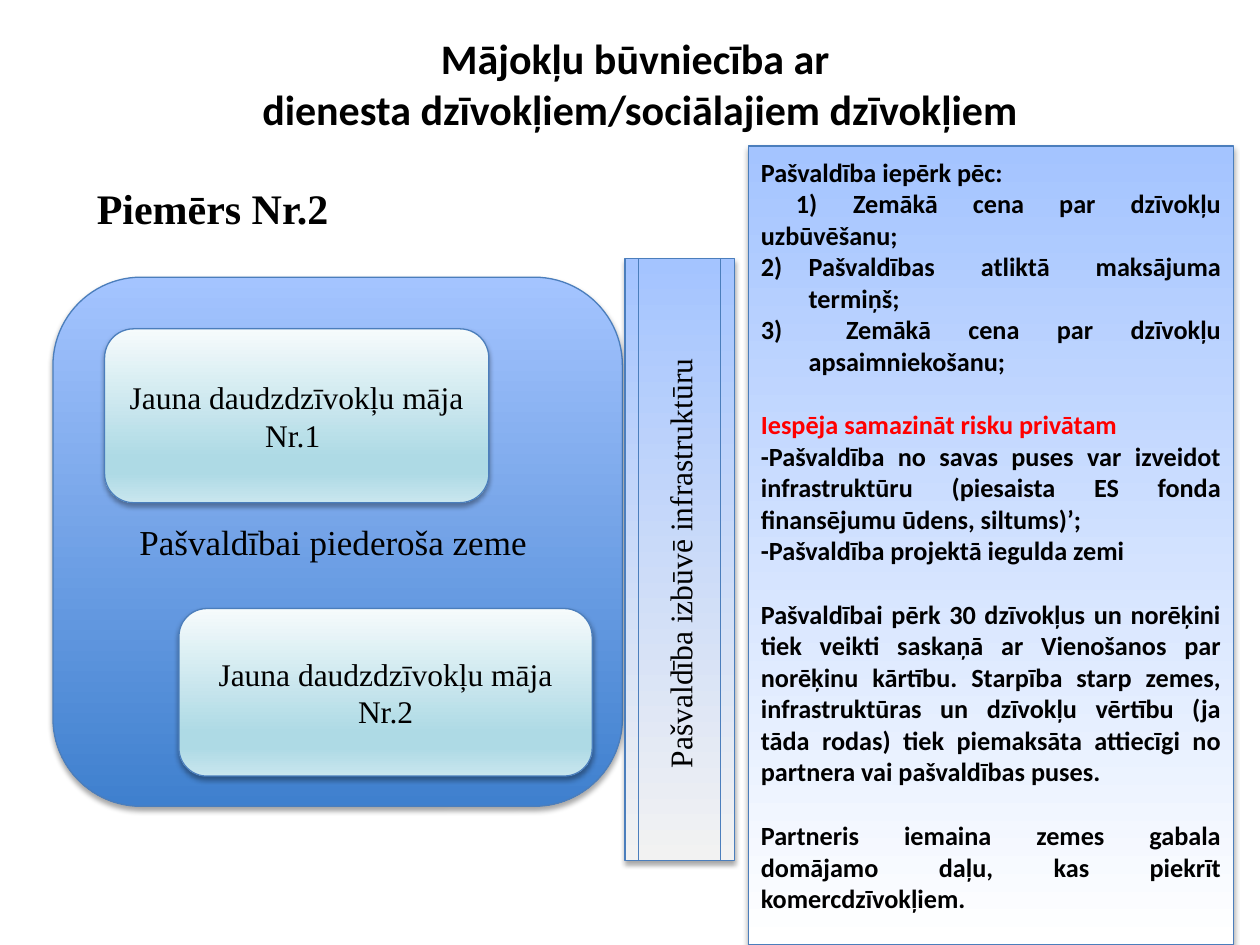
import dataclasses

import pptx
import pptx.dml.color
import pptx.enum.shapes
import pptx.enum.text
import pptx.oxml.ns
import pptx.oxml.xmlchemy
import pptx.util
from lxml import etree

SHAPE = pptx.enum.shapes.MSO_SHAPE
ALIGN = pptx.enum.text.PP_ALIGN
ANCHOR = pptx.enum.text.MSO_ANCHOR
qn = pptx.oxml.ns.qn

COLUMNS, ROWS = 100, 75


@dataclasses.dataclass(frozen=True)
class Theme:
    sans: str = "Calibri"
    serif: str = "Times New Roman"
    heading: int = 24
    land: int = 20
    label: int = 18
    body: int = 15
    ink: str = "000000"
    accent: str = "FF0000"
    outline: str = "4B7EBC"
    # Gradient stops run from top to bottom.
    land_fill: tuple = ((0, "A4C4FF"), (100, "3F80CE"))
    house_fill: tuple = ((0, "F6FBFC"), (74, "AEDAE5"), (83, "AEDAE5"), (100, "C9E6EE"))
    utility_fill: tuple = ((0, "A4C4FF"), (100, "F2F2F2"))
    terms_fill: tuple = ((0, "A4C4FF"), (100, "FFFFFF"))


THEME = Theme()


def place(deck, left, top, width, height):
    """Turn grid columns and rows into slide lengths."""
    column, row = deck.slide_width / COLUMNS, deck.slide_height / ROWS
    return [round(n) for n in (left * column, top * row, width * column, height * row)]


def write(para, text, size=THEME.body, font=THEME.serif, color=THEME.ink,
          bold=False, align=ALIGN.CENTER, gap=0, number_from=None):
    """Fill a paragraph; number_from makes it part of a list like 2), 3)."""
    if number_from:
        indent = pptx.util.Inches(0.38)
        props = para._p.get_or_add_pPr()
        props.set("marL", str(indent))
        props.set("indent", str(-indent))
        etree.SubElement(props, qn("a:buAutoNum"), type="arabicParenR",
                         startAt=str(number_from))
    para.alignment = align
    if gap:
        para.space_before = pptx.util.Pt(gap)
    for index, line in enumerate(text.split("\n")):
        if index:
            para.add_line_break()
        span = para.add_run()
        span.text = line
        span.font.size = pptx.util.Pt(size)
        span.font.name = font
        span.font.bold = bold
        span.font.color.rgb = pptx.dml.color.RGBColor.from_string(color)


def add_heading(deck, page, area, text, **format):
    box = page.shapes.add_textbox(*place(deck, *area))
    box.text_frame.word_wrap = True
    write(box.text_frame.paragraphs[0], text, size=THEME.heading, bold=True, **format)


def fill_gradient(shape, stops):
    shape.fill.gradient()
    shape.fill.gradient_angle = 270
    stop_list = shape._element.spPr.find(qn("a:gradFill")).find(qn("a:gsLst"))
    for old_stop in list(stop_list):
        stop_list.remove(old_stop)
    for position, color in stops:
        stop = etree.SubElement(stop_list, qn("a:gs"), pos=str(position * 1000))
        etree.SubElement(stop, qn("a:srgbClr"), val=color)


def cast_shadow(shape):
    shape.shadow.inherit = False
    effects = shape._element.spPr.find(qn("a:effectLst"))
    shadow = etree.SubElement(
        effects, qn("a:outerShdw"), blurRad=str(pptx.util.Pt(3.1)),
        dist=str(pptx.util.Pt(1.8)), dir="5400000", rotWithShape="0")
    color = etree.SubElement(shadow, qn("a:srgbClr"), val=THEME.ink)
    etree.SubElement(color, qn("a:alpha"), val="35000")


def add_block(deck, page, kind, area, stops):
    block = page.shapes.add_shape(kind, *place(deck, *area))
    fill_gradient(block, stops)
    block.line.color.rgb = pptx.dml.color.RGBColor.from_string(THEME.outline)
    block.line.width = pptx.util.Pt(0.75)
    cast_shadow(block)
    block.text_frame.word_wrap = True
    block.text_frame.vertical_anchor = ANCHOR.MIDDLE
    return block


def add_labelled_block(deck, page, kind, area, stops, text, size=THEME.label, upward=False):
    block = add_block(deck, page, kind, area, stops)
    if upward:
        block.text_frame._txBody.bodyPr.set("vert", "vert270")
    write(block.text_frame.paragraphs[0], text, size=size)


def add_terms(deck, page, area, terms):
    frame = add_block(deck, page, SHAPE.RECTANGLE, area, THEME.terms_fill).text_frame
    frame.vertical_anchor = ANCHOR.TOP
    frame.margin_top = pptx.util.Inches(0.08)
    for index, (text, format) in enumerate(terms):
        para = frame.add_paragraph() if index else frame.paragraphs[0]
        write(para, text, **{"font": THEME.sans, "bold": True,
                             "align": ALIGN.JUSTIFY, **format})


def main():
    deck = pptx.Presentation()
    deck.slide_width, deck.slide_height = pptx.util.Inches(10), pptx.util.Inches(7.5)
    page = deck.slides.add_slide(deck.slide_layouts[6])

    add_heading(deck, page, (8.3, 2.1, 85, 8.2),
                "Mājokļu būvniecība ar \ndienesta dzīvokļiem/sociālajiem dzīvokļiem",
                font=THEME.sans)
    add_heading(deck, page, (6.7, 14, 50, 5), "Piemērs Nr.2", align=ALIGN.LEFT)

    add_labelled_block(deck, page, SHAPE.ROUNDED_RECTANGLE, (4.2, 22, 45.2, 42),
                       THEME.land_fill, "Pašvaldībai piederoša zeme ", size=THEME.land)
    houses = (
        ((8.3, 26.1, 30.5, 13.8), "Jauna daudzdzīvokļu māja Nr.1 "),
        ((14.2, 48.3, 32.8, 13.3), "Jauna daudzdzīvokļu māja Nr.2"),
    )
    for area, text in houses:
        add_labelled_block(deck, page, SHAPE.ROUNDED_RECTANGLE, area,
                           THEME.house_fill, text)
    add_labelled_block(deck, page, SHAPE.FLOWCHART_PREDEFINED_PROCESS,
                       (49.6, 20.5, 8.7, 47.8), THEME.utility_fill,
                       "Pašvaldība izbūvē infrastruktūru ", upward=True)

    section = {"gap": 18.3}
    numbered = {"number_from": 2}
    add_terms(deck, page, (59.4, 11.6, 38.5, 63.4), (
        ("Pašvaldība iepērk pēc:", {"align": ALIGN.LEFT}),
        (" 1)\tZemākā cena par dzīvokļu uzbūvēšanu;", {}),
        ("Pašvaldības atliktā maksājuma termiņš; ", numbered),
        (" Zemākā cena par dzīvokļu apsaimniekošanu;", numbered),
        ("Iespēja samazināt risku privātam ", {**section, "color": THEME.accent}),
        ("-Pašvaldība no savas puses var izveidot infrastruktūru "
         "(piesaista ES fonda finansējumu ūdens, siltums)’;", {}),
        ("-Pašvaldība projektā iegulda zemi ", {}),
        ("Pašvaldībai pērk 30 dzīvokļus un norēķini tiek veikti saskaņā ar "
         "Vienošanos par norēķinu kārtību. Starpība starp zemes, infrastruktūras "
         "un dzīvokļu vērtību (ja tāda rodas) tiek piemaksāta attiecīgi no "
         "partnera vai pašvaldības puses. ", section),
        ("Partneris iemaina zemes gabala domājamo daļu, kas piekrīt "
         "komercdzīvokļiem. ", section),
    ))

    deck.save("out.pptx")


if __name__ == "__main__":
    main()
